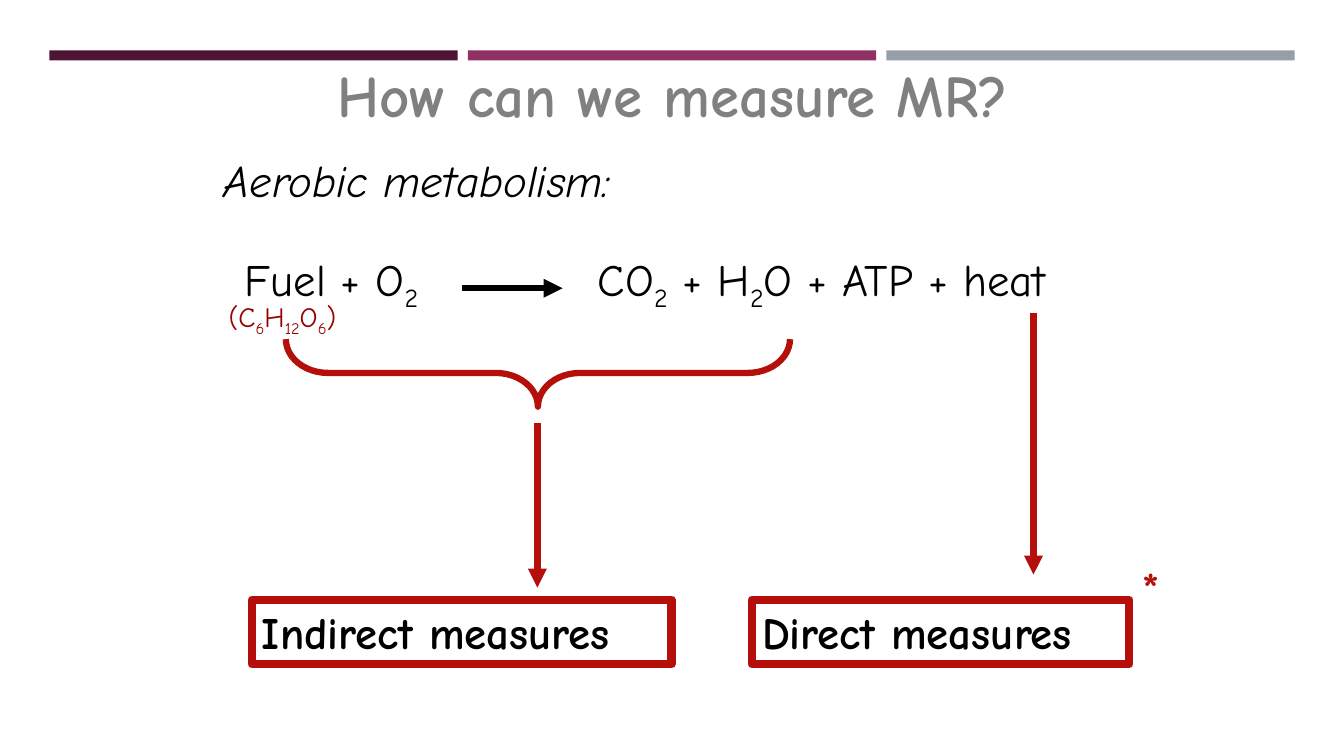
from pptx import Presentation
from pptx.dml.color import RGBColor
from pptx.enum.shapes import MSO_CONNECTOR, MSO_SHAPE
from pptx.enum.text import PP_ALIGN
from pptx.oxml.ns import qn
from pptx.util import Inches, Pt
from lxml import etree

RECTANGLE = MSO_SHAPE.RECTANGLE
RIGHT_BRACE = MSO_SHAPE.RIGHT_BRACE
STRAIGHT = MSO_CONNECTOR.STRAIGHT
LEFT, CENTER = PP_ALIGN.LEFT, PP_ALIGN.CENTER
FONT = "Comic Neue"
COLORS = {
    "plum": "4D1434",
    "berry": "903163",
    "steel": "969FA7",
    "gray": "808080",
    "black": "000000",
    "red": "B50F0C",
    "dark_red": "990000",
}


def color(name):
    return RGBColor.from_string(COLORS[name])


def write(shape, pieces, size, ink, bold=False, italic=False, align=LEFT):
    frame = shape.text_frame
    frame.word_wrap = True
    para = frame.paragraphs[0]
    para.alignment = align
    for index, piece in enumerate(pieces):
        span = para.add_run()
        span.text = piece
        span.font.name = FONT
        span.font.size = Pt(size)
        span.font.bold = bold
        span.font.italic = italic
        span.font.color.rgb = color(ink)
        if index % 2:
            span.font._element.set("baseline", "-25000")


deck = Presentation()
deck.slide_width = Inches(13.33)
deck.slide_height = Inches(7.5)
page = deck.slides.add_slide(deck.slide_layouts[6])

for column, name in enumerate(("plum", "berry", "steel")):
    bar = page.shapes.add_shape(
        RECTANGLE, Inches(0.49 + 4.15 * column), Inches(0.5), Inches(4.05), Inches(0.1))
    bar.shadow.inherit = False
    bar.fill.solid()
    bar.fill.fore_color.rgb = color(name)
    bar.line.fill.background()

title = page.shapes.add_textbox(Inches(1.67), Inches(0.53), Inches(10), Inches(0.81))
write(title, ["How can we measure MR?"], 42, "gray", bold=True, align=CENTER)

heading = page.shapes.add_textbox(Inches(2.12), Inches(1.47), Inches(4.48), Inches(0.64))
write(heading, ["Aerobic metabolism:"], 32, "black", italic=True)

# Every second piece is a subscript.
formulas = [
    (2.33, 2.45, 2.2, 0.64, 32, "black", ["Fuel + O", "2"]),
    (5.83, 2.45, 5.19, 0.64, 32, "black", ["CO", "2", " + H", "2", "O + ATP + heat"]),
    (2.17, 2.92, 1.44, 0.44, 20, "dark_red", ["(C", "6", "H", "12", "O", "6", ")"]),
]
for left, top, width, height, size, ink, pieces in formulas:
    formula = page.shapes.add_textbox(Inches(left), Inches(top), Inches(width), Inches(height))
    write(formula, pieces, size, ink)

brace = page.shapes.add_shape(RIGHT_BRACE, Inches(5), Inches(1.2), Inches(0.67), Inches(5))
brace.rotation = 90
brace.adjustments[0] = 0.625
brace.adjustments[1] = 0.5
brace.shadow.inherit = False
brace.fill.background()
brace.line.color.rgb = color("red")
brace.line.width = Pt(4.5)

arrows = [
    (4.58, 2.86, 5.58, 2.86, "black"),
    (5.33, 4.2, 5.33, 5.83, "red"),
    (10.25, 3.11, 10.25, 5.7, "red"),
]
for start_x, start_y, end_x, end_y, ink in arrows:
    arrow = page.shapes.add_connector(
        STRAIGHT, Inches(start_x), Inches(start_y), Inches(end_x), Inches(end_y))
    arrow.line.color.rgb = color(ink)
    arrow.line.width = Pt(4.5)
    properties = arrow._element.spPr
    etree.SubElement(properties.find(qn("a:ln")), qn("a:tailEnd"), type="triangle")
    etree.SubElement(properties, qn("a:effectLst"))

for left, width, label in ((2.5, 4.16, "Indirect measures"), (7.46, 3.74, "Direct measures")):
    box = page.shapes.add_shape(RECTANGLE, Inches(left), Inches(5.95), Inches(width), Inches(0.64))
    box.shadow.inherit = False
    box.fill.background()
    box.line.color.rgb = color("red")
    box.line.width = Pt(6)
    write(box, [label], 32, "black", bold=True)

star = page.shapes.add_textbox(Inches(11.23), Inches(5.5), Inches(0.44), Inches(0.64))
write(star, ["*"], 32, "red", bold=True)

deck.save("out.pptx")
